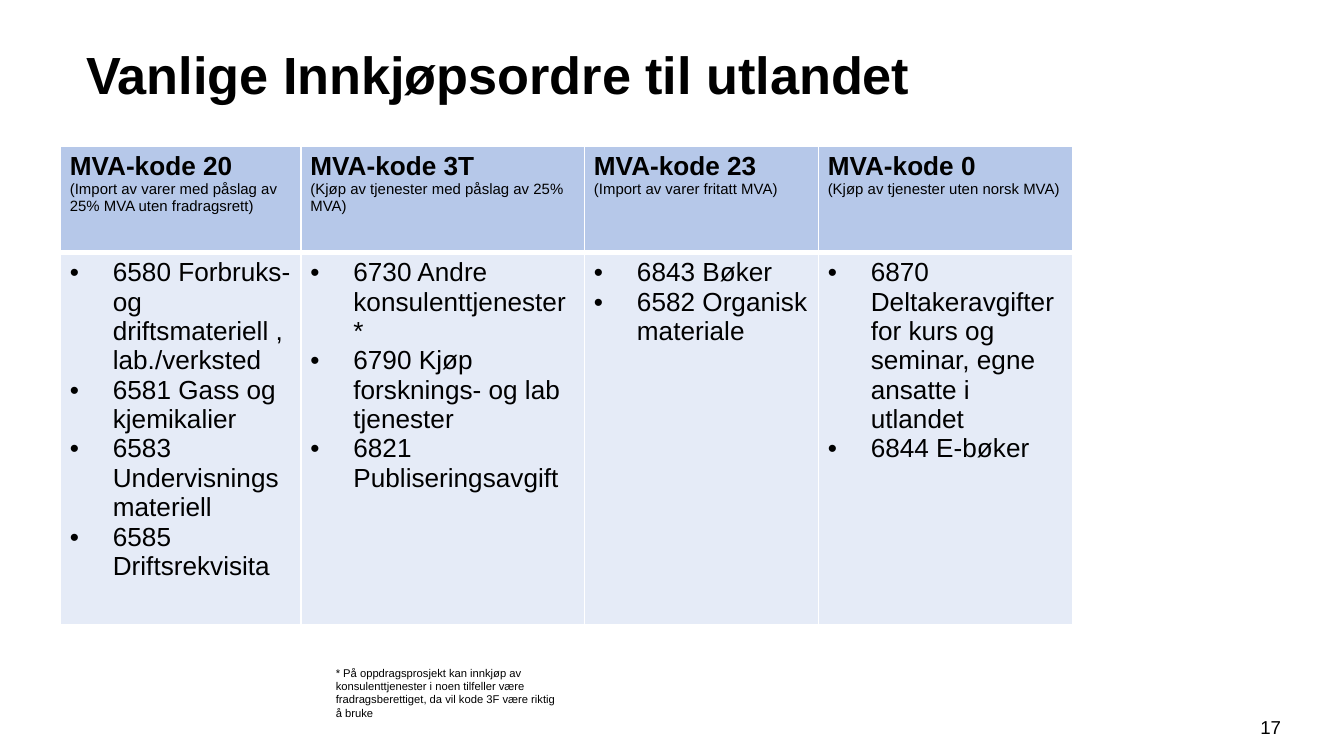
from pptx import Presentation
from pptx.dml.color import RGBColor
from pptx.enum.text import MSO_ANCHOR, PP_ALIGN
from pptx.oxml.ns import qn
from pptx.util import Inches, Pt
from lxml.etree import SubElement

BLACK = RGBColor(0x00, 0x00, 0x00)
WHITE = RGBColor(0xFF, 0xFF, 0xFF)
HEADER_BLUE = RGBColor(0xB6, 0xC8, 0xE9)
BODY_BLUE = RGBColor(0xE5, 0xEB, 0xF7)

COLUMNS = [
    (1.79, "MVA-kode 20", "(Import av varer med påslag av 25% MVA uten fradragsrett)",
     ["6580 Forbruks- og driftsmateriell , lab./verksted", "6581 Gass og kjemikalier",
      "6583 Undervisningsmateriell", "6585 Driftsrekvisita"]),
    (2.11, "MVA-kode 3T", "(Kjøp av tjenester med påslag av 25% MVA)",
     ["6730 Andre konsulenttjenester*", "6790 Kjøp forsknings- og lab tjenester",
      "6821 Publiseringsavgift"]),
    (1.74, "MVA-kode 23", "(Import av varer fritatt MVA)",
     ["6843 Bøker", "6582 Organisk materiale"]),
    (1.89, "MVA-kode 0", "(Kjøp av tjenester uten norsk MVA)",
     ["6870 Deltakeravgifter for kurs og seminar, egne ansatte i utlandet",
      "6844 E-bøker"]),
]


def add_run(p, text, size, bold=False):
    r = p.add_run()
    r.text = text
    r.font.name = "Arial"
    r.font.size = Pt(size)
    r.font.bold = bold
    r.font.color.rgb = BLACK


def format_cell(cell, color, top, bottom):
    cell.margin_left = cell.margin_right = Inches(0.07)
    cell.margin_top = cell.margin_bottom = Inches(0.04)
    tcPr = cell._tc.get_or_add_tcPr()
    for side, width in (("L", 1), ("R", 1), ("T", top), ("B", bottom)):
        ln = SubElement(tcPr, qn(f"a:ln{side}"), w=str(Pt(width)))
        fill = SubElement(ln, qn("a:solidFill"))
        SubElement(fill, qn("a:srgbClr"), val=str(WHITE))
    cell.fill.solid()
    cell.fill.fore_color.rgb = color


prs = Presentation()
prs.slide_width = Inches(10)
prs.slide_height = prs.slide_width * 9 // 16
s = prs.slides.add_slide(prs.slide_layouts[5])

title = s.shapes.title
title.left, title.top = Inches(0.54), Inches(0.26)
title.width, title.height = Inches(6.75), Inches(0.57)
tf = title.text_frame
tf.vertical_anchor = MSO_ANCHOR.MIDDLE
p = tf.paragraphs[0]
p.alignment = PP_ALIGN.LEFT
add_run(p, "Vanlige Innkjøpsordre til utlandet", 28, True)

table = s.shapes.add_table(2, len(COLUMNS), Inches(0.45), Inches(1.09),
                           Inches(7.53), Inches(3.56)).table
table.rows[0].height = Inches(0.79)
table.rows[1].height = Inches(2.77)

for i, (width, code, description, accounts) in enumerate(COLUMNS):
    table.columns[i].width = Inches(width)
    header, body = table.cell(0, i), table.cell(1, i)
    format_cell(header, HEADER_BLUE, 1, 3)
    format_cell(body, BODY_BLUE, 3, 1)

    tf = header.text_frame
    add_run(tf.paragraphs[0], code, 14, True)
    add_run(tf.add_paragraph(), description, 8)

    tf = body.text_frame
    for j, account in enumerate(accounts):
        p = tf.add_paragraph() if j else tf.paragraphs[0]
        pPr = p._p.get_or_add_pPr()
        pPr.set("marL", str(Inches(0.32)))
        pPr.set("indent", str(Inches(-0.32)))
        SubElement(pPr, qn("a:buFont"), typeface="Arial")
        SubElement(pPr, qn("a:buChar"), char="•")
        add_run(p, account, 14)

sp = s.shapes.add_textbox(Inches(2.4), Inches(4.94), Inches(1.88), Inches(0.43))
tf = sp.text_frame
tf.word_wrap = True
tf.vertical_anchor = MSO_ANCHOR.MIDDLE
add_run(tf.paragraphs[0], "* På oppdragsprosjekt kan innkjøp av konsulenttjenester i noen "
        "tilfeller være fradragsberettiget, da vil kode 3F være riktig å bruke", 6)

sp = s.shapes.add_textbox(Inches(9.27), Inches(5.26), Inches(0.37), Inches(0.3))
tf = sp.text_frame
tf.word_wrap = True
tf.vertical_anchor = MSO_ANCHOR.MIDDLE
tf.margin_left = tf.margin_right = 0
p = tf.paragraphs[0]
p.alignment = PP_ALIGN.CENTER
add_run(p, "17", 10)

prs.save("out.pptx")
